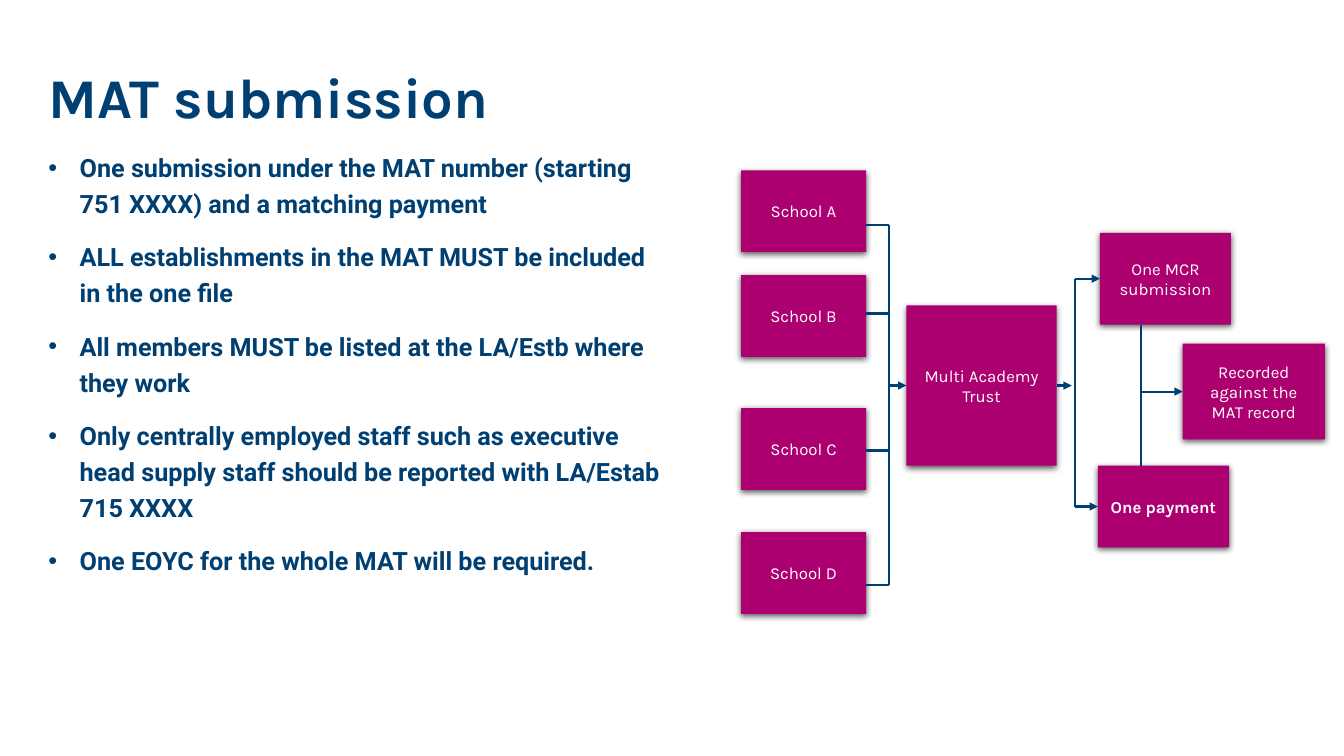
from lxml import etree
from pptx import Presentation
from pptx.dml.color import RGBColor
from pptx.enum.shapes import MSO_CONNECTOR as CONN, MSO_SHAPE as SHAPE
from pptx.enum.text import MSO_ANCHOR as ANCHOR, MSO_AUTO_SIZE as FIT, PP_ALIGN as ALIGN
from pptx.oxml.ns import qn
from pptx.util import Inches, Pt

NAVY, MAGENTA, WHITE = "003F72", "AC0071", "FFFFFF"
TOP, LEFT, BOTTOM, RIGHT = range(4)

TITLE = "MAT submission"
BULLETS = [
    "One submission under the MAT number (starting 751 XXXX) and a matching payment",
    "ALL establishments in the MAT MUST be included in the one file",
    "All members MUST be listed at the LA/Estb where they work",
    "Only centrally employed staff such as executive head supply staff "
    "should be reported with LA/Estab 715 XXXX",
    "One EOYC for the whole MAT will be required.",
]
# School name, box top, height at which its branch leaves
SCHOOLS = [
    ("School A", 1.69, 2.23),
    ("School B", 2.73, 3.11),
    ("School C", 4.05, 4.47),
    ("School D", 5.28, 5.8),
]
SCHOOL_X, SCHOOL_W, SCHOOL_H = 7.35, 1.24, 0.81
# Text, (left, top, width, height), bold
TRUST = ("Multi Academy Trust", (8.99, 3.03, 1.49, 1.59), False)
MCR = ("One MCR submission", (10.91, 2.31, 1.3, 0.91), False)
PAYMENT = ("One payment", (10.89, 4.62, 1.3, 0.81), True)
RECORD = ("Recorded against the MAT record", (11.73, 3.41, 1.41, 0.95), False)
SCHOOL_BUS, OUTPUT_BUS, RECORD_BUS = 8.82, 10.66, 11.32


def rgb(color):
    return RGBColor.from_string(color)


def style_font(font, name, size, color, bold):
    font.name, font.size, font.bold = name, Pt(size), bold
    font.color.rgb = rgb(color)


def place(sp, x, y, w, h):
    sp.left, sp.top, sp.width, sp.height = map(Inches, (x, y, w, h))


def mid_y(node):
    x, y, w, h = node[1]
    return y + h / 2


def add_box(text, at, bold=False):
    sp = s.shapes.add_shape(SHAPE.RECTANGLE, *map(Inches, at))
    sp.fill.solid()
    sp.fill.fore_color.rgb = rgb(MAGENTA)
    sp.line.fill.background()
    # Soft shadow straight below
    sp.shadow.inherit = False
    effects = sp._element.spPr.find(qn("a:effectLst"))
    shadow = etree.SubElement(effects, qn("a:outerShdw"), blurRad=str(Pt(4.5)),
                              dist=str(Pt(1.5)), dir="5400000", rotWithShape="0")
    black = etree.SubElement(shadow, qn("a:srgbClr"), val="000000")
    etree.SubElement(black, qn("a:alpha"), val="63000")
    tf = sp.text_frame
    tf.word_wrap = True
    tf.vertical_anchor = ANCHOR.MIDDLE
    p = tf.paragraphs[0]
    p.text = text
    p.alignment = ALIGN.CENTER
    style_font(p.runs[0].font, "Karla", 12, WHITE, bold)
    return sp


def add_line(x1, y1, x2, y2, arrow=False):
    line = s.shapes.add_connector(CONN.STRAIGHT, *map(Inches, (x1, y1, x2, y2)))
    line.line.color.rgb = rgb(NAVY)
    line.line.width = Pt(1.5)
    if arrow:
        etree.SubElement(line.line._get_or_add_ln(), qn("a:tailEnd"), type="triangle")
    etree.SubElement(line._element.spPr, qn("a:effectLst"))
    return line


prs = Presentation()
prs.slide_width, prs.slide_height = Inches(13.33), Inches(7.5)
s = prs.slides.add_slide(prs.slide_layouts[1])
s.background.fill.solid()
s.background.fill.fore_color.rgb = rgb(WHITE)

# Title
title = s.shapes.title
place(title, 0.38, 0.61, 10.68, 0.74)
tf = title.text_frame
tf.text = TITLE
tf.auto_size = FIT.NONE
tf.vertical_anchor = ANCHOR.BOTTOM
p = tf.paragraphs[0]
p.alignment = ALIGN.LEFT
p.line_spacing = 0.9
style_font(p.runs[0].font, "Karla", 40, NAVY, True)

# Bullet list
body = s.placeholders[1]
place(body, 0.38, 1.4, 6.29, 5.59)
tf = body.text_frame
tf.auto_size = FIT.NONE
tf.vertical_anchor = ANCHOR.TOP
for i, text in enumerate(BULLETS):
    p = tf.paragraphs[0] if i == 0 else tf.add_paragraph()
    p.text = text
    p.alignment = ALIGN.LEFT
    p.line_spacing = 1.2
    p.space_before = Pt(12 if i else 0)
    pPr = p._p.get_or_add_pPr()
    pPr.set("marL", str(Inches(0.31)))
    pPr.set("indent", str(-Inches(0.31)))
    etree.SubElement(pPr, qn("a:buFont"), typeface="Arial")
    etree.SubElement(pPr, qn("a:buChar"), char="•")
    style_font(p.runs[0].font, "Roboto", 18, NAVY, True)

# Boxes
for name, top, branch_y in SCHOOLS:
    add_box(name, (SCHOOL_X, top, SCHOOL_W, SCHOOL_H))
trust, mcr, payment, record = [add_box(*node) for node in (TRUST, MCR, PAYMENT, RECORD)]

# Schools into the trust
for name, top, branch_y in SCHOOLS:
    add_line(SCHOOL_X + SCHOOL_W, branch_y, SCHOOL_BUS, branch_y)
add_line(SCHOOL_BUS, SCHOOLS[0][2], SCHOOL_BUS, SCHOOLS[-1][2])
add_line(SCHOOL_BUS, mid_y(TRUST), TRUST[1][0], mid_y(TRUST), True).end_connect(trust, LEFT)

# Trust out to submission and payment
trust_right = TRUST[1][0] + TRUST[1][2]
add_line(trust_right, mid_y(TRUST), 10.63, mid_y(TRUST), True).begin_connect(trust, RIGHT)
add_line(OUTPUT_BUS, mid_y(MCR), OUTPUT_BUS, mid_y(PAYMENT))
for node, sp in ((MCR, mcr), (PAYMENT, payment)):
    add_line(OUTPUT_BUS, mid_y(node), node[1][0], mid_y(node), True).end_connect(sp, LEFT)

# Submission and payment into the record
add_line(RECORD_BUS, MCR[1][1] + MCR[1][3], RECORD_BUS, PAYMENT[1][1])
add_line(RECORD_BUS, mid_y(RECORD), RECORD[1][0], mid_y(RECORD), True).end_connect(record, LEFT)

prs.save("out.pptx")
